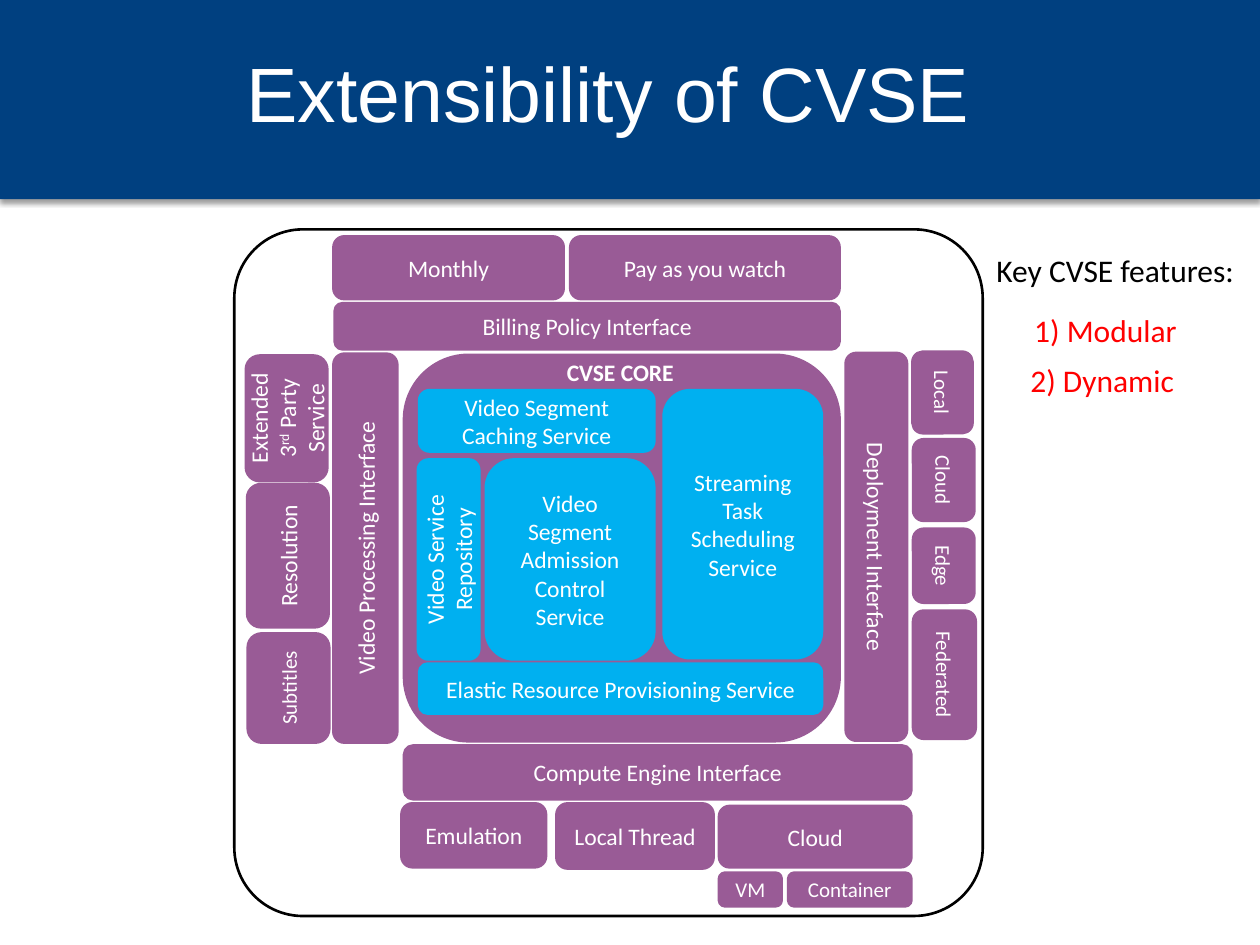
from lxml import etree
from pptx import Presentation, util as u
from pptx.dml.color import RGBColor
from pptx.enum import shapes, text
from pptx.oxml import ns

COLORS = {"navy": "004080", "purple": "995B96", "blue": "00B0F0",
          "white": "FFFFFF", "black": "000000", "red": "FF0000"}
COLUMNS, ROWS = 100, 75
UPRIGHT, UP, DOWN = 0, 270, 90
BODY, SMALL, LARGE = 13.5, 12, 18

# label, box (left, top, width, height in grid cells), text size
OUTER_BLOCKS = {
    UPRIGHT: [
        ("Monthly", (26.5, 18.8, 18.2, 4.9), BODY),
        ("Pay as you watch", (45.3, 18.8, 21.3, 4.9), BODY),
        ("Billing Policy Interface", (26.6, 24.1, 40, 3.6), BODY),
        ("Compute Engine Interface", (32.1, 59.2, 40.2, 4.2), BODY),
        ("Emulation", (31.9, 63.8, 11.4, 5), BODY),
        ("Local Thread", (44.2, 63.8, 12.4, 5.1), BODY),
        ("Cloud", (57.1, 64, 15.2, 4.8), BODY),
        ("VM", (57.1, 69.3, 4.9, 2.6), SMALL),
        ("Container", (62.6, 69.3, 9.7, 2.6), SMALL),
    ],
    UP: [
        ("Video Processing Interface", (26.5, 28.1, 5, 30.8), BODY),
        ("Extended 3^rd^ Party Service", (19.55, 28.25, 6.4, 9.9), BODY),
        ("Resolution", (19.65, 38.45, 6.4, 11.3), BODY),
        ("Subtitles", (19.7, 50.3, 6.4, 8.6), SMALL),
    ],
    DOWN: [
        ("Deployment Interface", (67.15, 28.05, 4.8, 30.7), BODY),
        ("Local", (72.45, 27.95, 4.7, 6.4), SMALL),
        ("Cloud", (72.5, 34.9, 4.8, 6.4), SMALL),
        ("Edge", (72.5, 42, 4.8, 5.8), SMALL),
        ("Federated", (72.5, 48.5, 4.9, 10.1), SMALL),
    ],
}
CORE_BLOCKS = {
    UPRIGHT: [
        ("Video Segment Caching Service", (33.3, 31, 18.6, 4.8), BODY),
        ("Video Segment Admission Control\nService",
         (38.6, 36.5, 13.3, 15.8), BODY),
        ("Streaming Task Scheduling Service", (52.7, 31, 12.5, 21.2), BODY),
        ("Elastic Resource Provisioning Service",
         (33.3, 52.7, 31.9, 3.9), BODY),
    ],
    UP: [("Video Service Repository", (33.2, 36.5, 4.8, 15.8), BODY)],
}
LABELS = [
    ("CVSE CORE", (44, 27.9, 10.6, 3.3), BODY, "white", True),
    ("Key CVSE features:", (78.1, 19.4, 21.1, 4), LARGE, "black", False),
    ("1) Modular", (81.1, 24.2, 13.5, 4), LARGE, "red", False),
    ("2) Dynamic", (80.8, 28.2, 13.6, 4), LARGE, "red", False),
]


def rgb(name):
    return RGBColor.from_string(COLORS[name])


def place(box, rotation=UPRIGHT):
    """Turn a box as seen on the grid into the frame before rotation."""
    left, top, width, height = box
    if rotation:
        left, top = left + (width - height) / 2, top + (height - width) / 2
        width, height = height, width
    column, row = u.Inches(10) / COLUMNS, u.Inches(7.5) / ROWS
    return [round(value) for value in
            (left * column, top * row, width * column, height * row)]


def write(frame, content, size, color, font="Calibri", align=None, bold=False):
    """Fill a frame; lines are paragraphs, and ^ marks enclose superscript."""
    for number, line in enumerate(content.split("\n")):
        paragraph = frame.add_paragraph() if number else frame.paragraphs[0]
        paragraph.alignment = align
        for index, part in enumerate(line.split("^")):
            run = paragraph.add_run()
            run.text = part
            run.font.size, run.font.name = u.Pt(size), font
            run.font.bold = bold
            run.font.color.rgb = rgb(color)
            if index % 2:
                run.font._element.set("baseline", "30000")


def add_panel(slide, kind, box, fill=None, line=None, weight=2,
              rotation=UPRIGHT):
    shape = slide.shapes.add_shape(kind, *place(box, rotation))
    shape.shadow.inherit = False
    shape.rotation = rotation
    if fill:
        shape.fill.solid()
        shape.fill.fore_color.rgb = rgb(fill)
    else:
        shape.fill.background()
    if line:
        shape.line.color.rgb = rgb(line)
        shape.line.width = u.Pt(weight)
    else:
        shape.line.fill.background()
    return shape


def add_rounded(slide, box, **style):
    return add_panel(slide, shapes.MSO_SHAPE.ROUNDED_RECTANGLE, box, **style)


def add_blocks(slide, blocks, color):
    for rotation, rows in blocks.items():
        for label, box, size in rows:
            shape = add_rounded(slide, box, fill=color, line=color,
                                rotation=rotation)
            frame = shape.text_frame
            frame.vertical_anchor = text.MSO_ANCHOR.MIDDLE
            write(frame, label, size, "white", align=text.PP_ALIGN.CENTER)


def add_label(slide, content, box, size, color, bold):
    frame = slide.shapes.add_textbox(*place(box)).text_frame
    frame.word_wrap = False
    frame.auto_size = text.MSO_AUTO_SIZE.SHAPE_TO_FIT_TEXT
    write(frame, content, size, color, bold=bold)


def add_header(slide, title):
    banner = add_panel(slide, shapes.MSO_SHAPE.RECTANGLE,
                       (0, 0, COLUMNS, 15.8), fill="navy")
    effects = banner.element.spPr.find(ns.qn("a:effectLst"))
    shadow = etree.SubElement(
        effects, ns.qn("a:outerShdw"), blurRad=str(u.Pt(3.1)),
        dist=str(u.Pt(1.6)), dir="5400000", rotWithShape="0")
    color = etree.SubElement(shadow, ns.qn("a:srgbClr"), val=COLORS["black"])
    etree.SubElement(color, ns.qn("a:alpha"), val="38000")

    frame = slide.shapes.add_textbox(*place((3.3, 1, 90, 12.5))).text_frame
    frame.word_wrap = True
    frame.vertical_anchor = text.MSO_ANCHOR.MIDDLE
    write(frame, title, 44, "white", "Arial", text.PP_ALIGN.CENTER)


def main():
    presentation = Presentation()
    presentation.slide_width = u.Inches(10)
    presentation.slide_height = u.Inches(7.5)
    slide = presentation.slides.add_slide(presentation.slide_layouts[6])

    add_header(slide, "Extensibility of CVSE")
    border = add_rounded(slide, (18.6, 18.2, 59.4, 54.5), line="black",
                         weight=1.5)
    border.adjustments[0] = 0.1
    add_rounded(slide, (32.1, 28.2, 34.5, 30.6), fill="purple", line="purple")
    add_blocks(slide, OUTER_BLOCKS, "purple")
    add_blocks(slide, CORE_BLOCKS, "blue")
    for label in LABELS:
        add_label(slide, *label)
    presentation.save("out.pptx")


if __name__ == "__main__":
    main()
